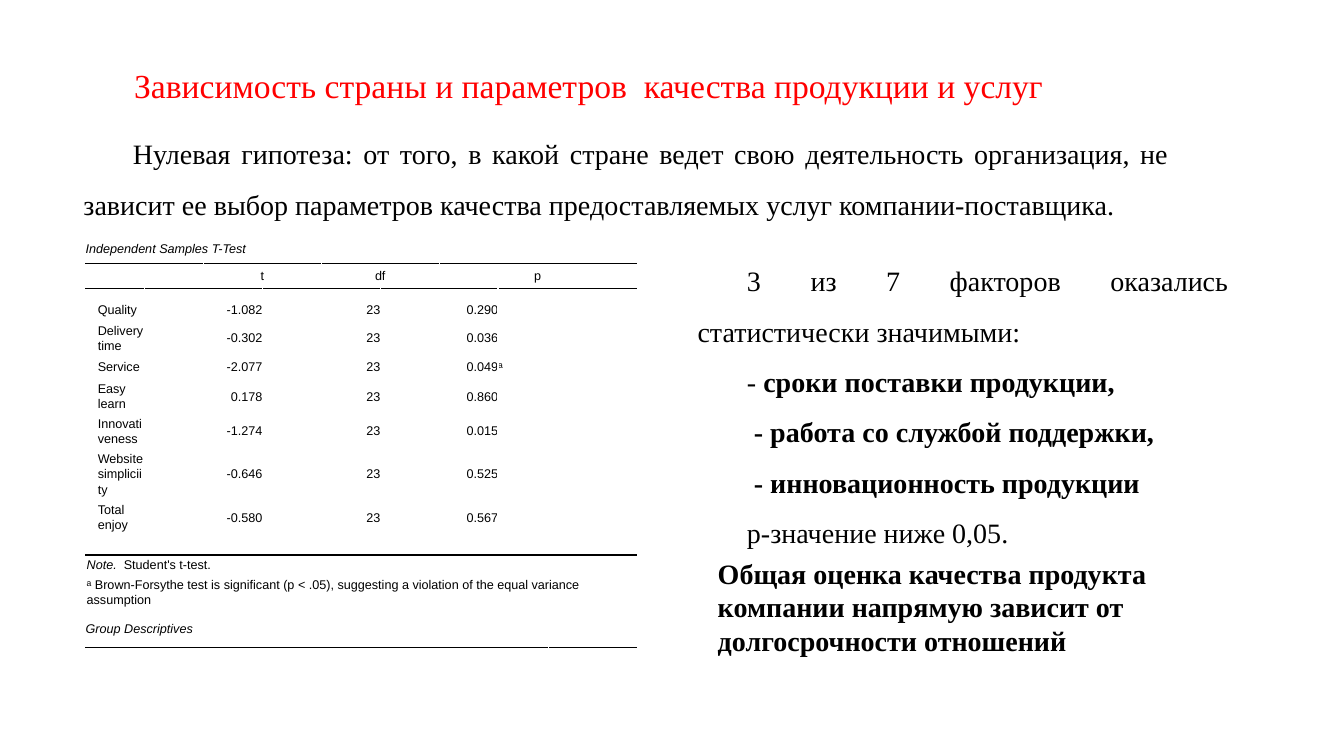
"""Builds the slide on country and quality parameters with its t-test table."""
import dataclasses

import pptx
import pptx.dml.color
import pptx.enum.text
import pptx.oxml.ns
import pptx.util
from lxml import etree
from pptx.util import Inches

ALIGN = pptx.enum.text.PP_ALIGN
ANCHOR = pptx.enum.text.MSO_ANCHOR
FIT = pptx.enum.text.MSO_AUTO_SIZE


@dataclasses.dataclass(frozen=True)
class Theme:
    """Fonts, colours and type sizes of the slide."""
    body_font: str = "Times New Roman"
    table_font: str = "Arial"
    title_color: str = "FF0000"
    ink: str = "000000"
    title_size: int = 24
    body_size: int = 20
    table_size: int = 9


THEME = Theme()
HEADER_INSETS = (0.12, 0.03, 0.12, 0.03)
VALUE_INSETS = (0.12, 0.01, 0, 0.01)
FIRST_INSETS = (0.12, 0.11, 0, 0.01)
MARK_INSETS = (0, 0.01, 0.12, 0.01)
NOTE_INSETS = (0.01, 0.01, 0.01, 0.01)
CAPTION_INSETS = (0, 0.06, 0.1, 0.06)
ROW_HEIGHTS = (0.28, 0.25, 0.32, 0.32, 0.24, 0.33, 0.33,
               0.52, 0.33, 0.2, 0.2, 0.33, 0.38)
RULES = {0: (0, 1), 1: (1, 1), 2: (1, 0), 9: (0, 1.5), 10: (1.5, 0), 12: (0, 1)}
MERGES = ([(row, 0, 8) for row in (0, 9, 10, 11)] + [(12, 0, 7)]
          + [(1, 0, 1), (1, 2, 3), (1, 4, 5), (1, 6, 8)]
          + [(row, 7, 8) for row in range(2, 9)])
T_TEST = (
    ("Quality", "-1.082", "23", "0.290"),
    ("Delivery time", "-0.302", "23", "0.036"),
    ("Service", "-2.077", "23", "0.049"),
    ("Easy learn", "0.178", "23", "0.860"),
    ("Innovativeness", "-1.274", "23", "0.015"),
    ("Website simpliciity", "-0.646", "23", "0.525"),
    ("Total enjoy", "-0.580", "23", "0.567"),
)


def add_run(p, text, size, font=THEME.body_font, color=THEME.ink, bold=False, italic=False):
    """Add one formatted run to a paragraph."""
    r = p.add_run()
    r.text = text
    r.font.size = pptx.util.Pt(size)
    r.font.name = font
    r.font.bold = bold
    r.font.italic = italic
    r.font.color.rgb = pptx.dml.color.RGBColor.from_string(color)


def set_indent(p, left, first):
    """Set the left margin and first-line indent of a paragraph."""
    pPr = p._p.get_or_add_pPr()
    pPr.set("marL", str(Inches(left)))
    pPr.set("indent", str(Inches(first)))


def add_title(s, text):
    """Place and format the title placeholder."""
    sp = s.shapes.title
    sp.left, sp.top, sp.width, sp.height = map(Inches, (0.24, 0.59, 10.51, 0.5))
    tf = sp.text_frame
    tf.word_wrap = True
    tf.auto_size = FIT.SHAPE_TO_FIT_TEXT
    tf.vertical_anchor = ANCHOR.TOP
    p = tf.paragraphs[0]
    p.alignment = ALIGN.JUSTIFY
    set_indent(p, 0.5, 0.49)
    add_run(p, text, THEME.title_size, color=THEME.title_color)


def add_text(s, box, paragraphs, prose=True):
    """Add a text box; prose is justified, indented and widely spaced."""
    tf = s.shapes.add_textbox(*map(Inches, box)).text_frame
    tf.word_wrap = True
    tf.auto_size = FIT.SHAPE_TO_FIT_TEXT
    for i, runs in enumerate(paragraphs):
        p = tf.add_paragraph() if i else tf.paragraphs[0]
        if prose:
            p.alignment = ALIGN.JUSTIFY
            p.line_spacing = 1.5
            set_indent(p, 0, 0.49)
        for text, bold in runs:
            add_run(p, text, THEME.body_size, bold=bold)


def set_rule(cell, tag, width):
    """Draw one horizontal border of a cell, or clear it at zero width."""
    ns = pptx.oxml.ns.qn
    ln = etree.SubElement(cell._tc.get_or_add_tcPr(), ns(tag), w=str(pptx.util.Pt(width)))
    if width:
        fill = etree.SubElement(ln, ns("a:solidFill"))
        etree.SubElement(fill, ns("a:srgbClr"), val=THEME.ink)
    else:
        etree.SubElement(ln, ns("a:noFill"))


def set_insets(cell, insets):
    """Set the left, top, right and bottom insets of a cell."""
    (cell.margin_left, cell.margin_top,
     cell.margin_right, cell.margin_bottom) = map(Inches, insets)


def fill_cell(cell, insets, runs, align=ALIGN.LEFT):
    """Write runs of text and italic flag into a cell."""
    set_insets(cell, insets)
    p = cell.text_frame.paragraphs[0]
    p.alignment = align
    p.line_spacing = 1.07
    for text, italic in runs:
        add_run(p, text, THEME.table_size, THEME.table_font, italic=italic)


def prepare_cells(table):
    """Give every cell its borders, empty fill and small empty paragraph."""
    for i, row in enumerate(table.rows):
        top, bottom = RULES.get(i, (0, 0))
        for cell in row.cells:
            set_rule(cell, "a:lnT", top)
            set_rule(cell, "a:lnB", bottom)
            cell.fill.background()
            cell.vertical_anchor = ANCHOR.MIDDLE
            set_insets(cell, (0, 0, 0, 0))
            etree.SubElement(cell.text_frame.paragraphs[0]._p,
                             pptx.oxml.ns.qn("a:endParaRPr"),
                             sz=str(THEME.table_size * 100))


def add_t_test(s):
    """Add the t-test table with caption, values and notes."""
    frame = s.shapes.add_table(len(ROW_HEIGHTS), 9, Inches(0.85), Inches(2.33),
                               Inches(5.46), Inches(sum(ROW_HEIGHTS)))
    table = frame.table
    table.first_row = table.horz_banding = False
    widths = [Inches(4.09) // 7] * 7 + [Inches(0.5), Inches(0.87)]
    for column, width in zip(table.columns, widths):
        column.width = width
    for row, height in zip(table.rows, ROW_HEIGHTS):
        row.height = Inches(height)
    prepare_cells(table)
    for row, first, last in MERGES:
        table.cell(row, first).merge(table.cell(row, last))

    for column, head in zip((2, 4, 6), ("t", "df", "p")):
        fill_cell(table.cell(1, column), HEADER_INSETS, [(head, False)], ALIGN.CENTER)
    for i, values in enumerate(T_TEST):
        for j, value in enumerate(values):
            fill_cell(table.cell(i + 2, j * 2), VALUE_INSETS if i else FIRST_INSETS,
                      [(value, False)], ALIGN.RIGHT if j else ALIGN.LEFT)
    fill_cell(table.cell(4, 7), MARK_INSETS, [("ᵃ", False)])
    fill_cell(table.cell(0, 0), CAPTION_INSETS, [("Independent Samples T-Test", True)])
    fill_cell(table.cell(10, 0), NOTE_INSETS,
              [("Note.", True), ("  Student's t-test.", False)])
    fill_cell(table.cell(11, 0), NOTE_INSETS,
              [("ᵃ Brown-Forsythe test is significant (p < .05), suggesting "
                "a violation of the equal variance assumption", False)])
    fill_cell(table.cell(12, 0), CAPTION_INSETS, [("Group Descriptives", True)])


def main():
    """Build and save the slide."""
    prs = pptx.Presentation()
    prs.slide_width, prs.slide_height = Inches(13.33), Inches(7.5)
    s = prs.slides.add_slide(prs.slide_layouts[5])
    add_title(s, "Зависимость страны и параметров  качества продукции и услуг")
    add_t_test(s)
    add_text(s, (6.82, 2.4, 5.46, 3.07), [
        [("3 из 7 факторов оказались статистически значимыми: ", False)],
        [("- ", False), ("сроки поставки продукции,", True)],
        [(" - работа со службой поддержки,", True)],
        [(" - инновационность продукции ", True)],
        [("р-значение ниже 0,05. ", False)],
    ])
    add_text(s, (0.73, 1.14, 10.96, 1.05), [[(
        "Нулевая гипотеза: от того, в какой стране ведет свою деятельность "
        "организация, не зависит ее выбор параметров качества предоставляемых "
        "услуг компании-поставщика.", False)]])
    add_text(s, (7.02, 5.47, 5.29, 1.11), [[(
        "Общая оценка качества продукта компании напрямую зависит от "
        "долгосрочности отношений", True)]], prose=False)
    prs.save("out.pptx")


if __name__ == "__main__":
    main()
